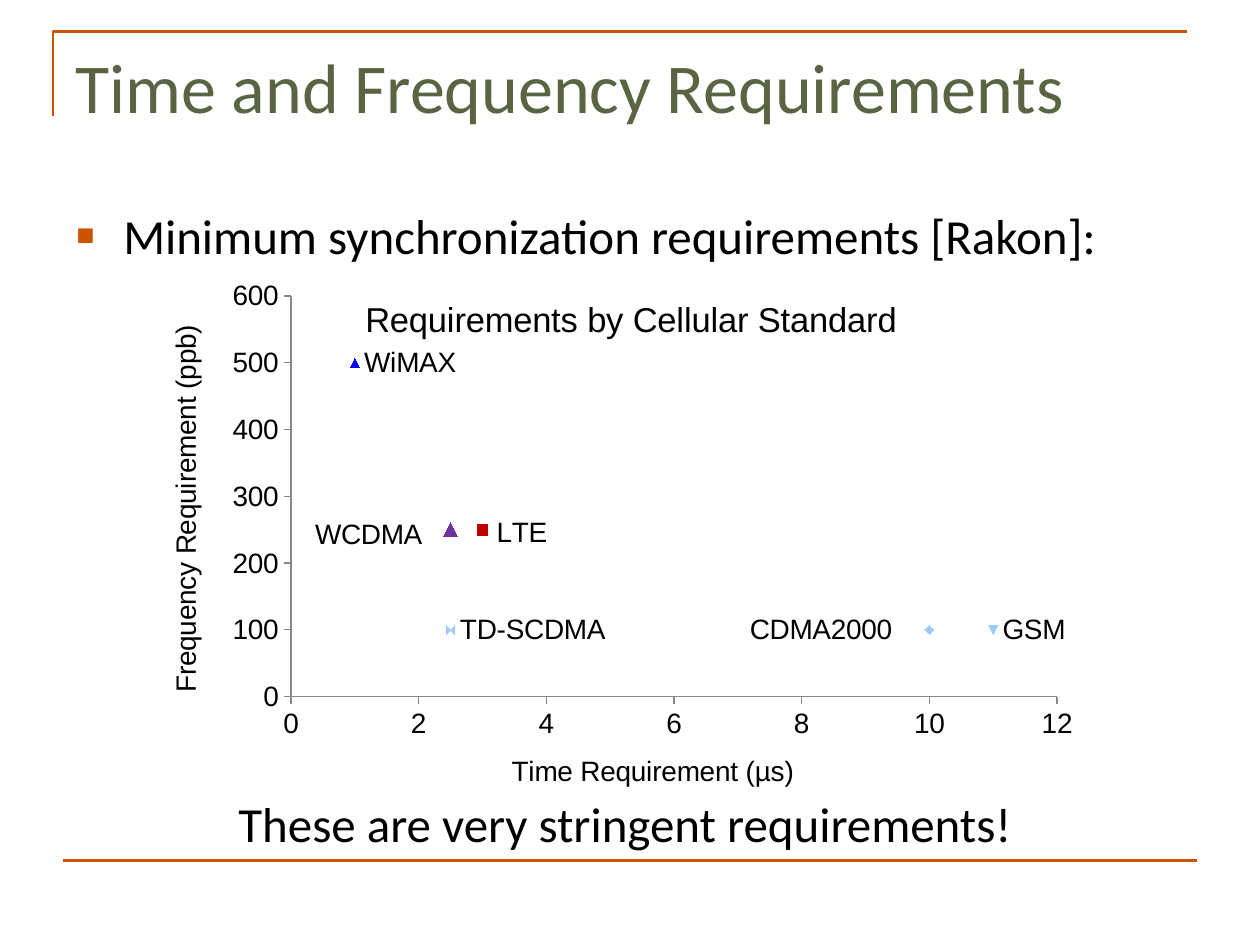
import pptx
import pptx.chart.data
import pptx.dml.color
import pptx.enum.chart
import pptx.enum.shapes
import pptx.enum.text
import pptx.oxml
import pptx.oxml.ns
import pptx.util
from pptx.util import Inches

RGBColor = pptx.dml.color.RGBColor
Marker = pptx.enum.chart.XL_MARKER_STYLE
Side = pptx.enum.chart.XL_LABEL_POSITION
qn = pptx.oxml.ns.qn

ORANGE = RGBColor(0xCC, 0x53, 0x00)
OLIVE = RGBColor(0x59, 0x64, 0x42)
BLACK = RGBColor(0, 0, 0)
GREY = RGBColor(0x87, 0x87, 0x87)
BLUE = RGBColor(0, 0, 0xFF)
RED = RGBColor(0xC0, 0, 0)
PURPLE = RGBColor(0x70, 0x30, 0xA0)
SKY = RGBColor(0x99, 0xCC, 0xFF)

CHART_AREA = (1.25, 2.17, 7.5, 4.33)

# name, time (µs), frequency (ppb), marker, size, colour, label side, label offset (inches)
STANDARDS = [
    ("CDMA2000", 10, 100, Marker.AUTOMATIC, 5, SKY, Side.LEFT, (-0.22, 0)),
    ("GSM", 11, 100, Marker.AUTOMATIC, 5, SKY, Side.RIGHT, None),
    ("WiMAX", 1, 500, Marker.AUTOMATIC, 5, BLUE, Side.RIGHT, None),
    ("LTE", 3, 250, Marker.SQUARE, 6, RED, Side.RIGHT, (0.03, 0.02)),
    ("WCDMA", 2.5, 250, Marker.TRIANGLE, 8, PURPLE, Side.LEFT, (-0.13, 0.04)),
    ("TD-SCDMA", 2.5, 100, Marker.AUTOMATIC, 5, SKY, Side.RIGHT, None),
]


def place(element, index, modes, **lengths):
    """Lay out a chart element by hand; lengths are inches within the chart area."""
    layout = element.find(qn("c:layout"))
    if layout is None:
        layout = element.makeelement(qn("c:layout"))
        element.insert(index, layout)
    manual = layout.makeelement(qn("c:manualLayout"))
    layout.append(manual)
    width, height = CHART_AREA[2:]
    whole = {"x": width, "w": width, "y": height, "h": height}
    shares = {name: length / whole[name] for name, length in lengths.items()}
    for name, value in {**modes, **shares}.items():
        manual.append(manual.makeelement(qn(f"c:{name}"), {"val": str(value)}))


class SlideBuilder:
    body_font = "Calibri"
    chart_font = "Arial"
    chart_size = 16
    rule_width = pptx.util.Pt(1.5)
    edge_modes = {"xMode": "edge", "yMode": "edge"}

    def __init__(self, deck):
        self.slide = deck.slides.add_slide(deck.slide_layouts[6])
        self.shapes = self.slide.shapes

    def style_rule(self, shape):
        shape.line.color.rgb = ORANGE
        shape.line.width = self.rule_width

    def corner(self, left, top, right, bottom):
        builder = self.shapes.build_freeform(Inches(left), Inches(bottom))
        builder.add_line_segments(
            [(Inches(left), Inches(top)), (Inches(right), Inches(top))], close=False)
        shape = builder.convert_to_shape()
        shape.fill.background()
        shape.shadow.inherit = False
        self.style_rule(shape)

    def rule(self, left, right, y):
        line = self.shapes.add_connector(
            pptx.enum.shapes.MSO_CONNECTOR.STRAIGHT,
            Inches(left), Inches(y), Inches(right), Inches(y))
        self.style_rule(line)
        properties = line._element.spPr
        properties.append(properties.makeelement(qn("a:effectLst")))

    def text(self, words, area, size, color, align=None, bullet=False):
        box = self.shapes.add_textbox(*map(Inches, area))
        box.text_frame.word_wrap = True
        para = box.text_frame.paragraphs[0]
        para.alignment = align
        if bullet:
            self.bullet(para)
        span = para.add_run()
        span.text = words
        span.font.name = self.body_font
        span.font.size = pptx.util.Pt(size)
        span.font.color.rgb = color

    def bullet(self, para):
        properties = para._p.get_or_add_pPr()
        properties.set("marL", str(Inches(0.38)))
        properties.set("indent", str(-Inches(0.38)))
        namespace = pptx.oxml.ns.nsdecls("a")
        for xml in (f'<a:buClr {namespace}><a:srgbClr val="{ORANGE}"/></a:buClr>',
                    f'<a:buSzPct {namespace} val="120000"/>',
                    f'<a:buFont {namespace} typeface="Arial"/>',
                    f'<a:buChar {namespace} char="▪"/>'):
            properties.append(pptx.oxml.parse_xml(xml))

    def scatter(self, title, standards):
        data = pptx.chart.data.XyChartData()
        for name, time, frequency, *_ in standards:
            data.add_series(name).add_data_point(time, frequency)
        chart = self.shapes.add_chart(
            pptx.enum.chart.XL_CHART_TYPE.XY_SCATTER, *map(Inches, CHART_AREA), data).chart
        chart.font.name = self.chart_font
        chart.font.size = pptx.util.Pt(self.chart_size)
        chart.font.color.rgb = BLACK
        chart.has_legend = False
        chart.has_title = True
        chart.chart_title.include_in_layout = True
        self.chart_title(chart.chart_title, title, 19.7, 1.6, 0.14)
        chart.plots[0].vary_by_categories = False
        place(chart._chartSpace.chart.plotArea, 0,
              {"layoutTarget": "inner", **self.edge_modes}, x=1.06, y=0.18, w=6.08, h=3.18)
        for series, standard in zip(chart.plots[0].series, standards):
            self.series(series, *standard[3:])
        self.axis(chart.category_axis, "Time Requirement (µs)", 12, 2, 2.77, 3.77)
        self.axis(chart.value_axis, "Frequency Requirement (ppb)", 600, 100, 0.04, 0.37)

    def chart_title(self, title, words, size, x, y):
        span = title.text_frame.paragraphs[0].add_run()
        span.text = words
        span.font.name = self.chart_font
        span.font.size = pptx.util.Pt(size)
        span.font.bold = False
        span.font.color.rgb = BLACK
        place(title._element, 1, self.edge_modes, x=x, y=y)

    def axis(self, axis, words, maximum, step, x, y):
        axis.minimum_scale = 0
        axis.maximum_scale = maximum
        axis.major_unit = step
        axis.has_major_gridlines = False
        axis.major_tick_mark = pptx.enum.chart.XL_TICK_MARK.OUTSIDE
        axis.minor_tick_mark = pptx.enum.chart.XL_TICK_MARK.NONE
        axis.format.line.color.rgb = GREY
        self.chart_title(axis.axis_title, words, self.chart_size, x, y)

    def series(self, series, marker, size, color, side, offset):
        series.smooth = False
        series.format.line.fill.background()
        series.marker.style = marker
        series.marker.size = size
        series.marker.format.fill.solid()
        series.marker.format.fill.fore_color.rgb = color
        series.marker.format.line.fill.background()
        series.points[0].data_label.position = side
        label = series._element.find(".//" + qn("c:dLbl"))
        label.find(qn("c:showVal")).set("val", "0")
        label.find(qn("c:showSerName")).set("val", "1")
        if offset:
            place(label, 1, {}, x=offset[0], y=offset[1])
        self.hide_leader_lines(label.getparent())

    def hide_leader_lines(self, labels):
        leader = labels.find(qn("c:showLeaderLines"))
        if leader is None:
            leader = labels.makeelement(qn("c:showLeaderLines"))
            labels.append(leader)
        leader.set("val", "0")


def main():
    deck = pptx.Presentation()
    deck.slide_width, deck.slide_height = Inches(10), Inches(7.5)
    page = SlideBuilder(deck)
    page.corner(0.42, 0.25, 9.42, 0.92)
    page.rule(0.5, 9.5, 6.83)
    page.text("Time and Frequency Requirements", (0.5, 0.3, 9, 1.25), 40, OLIVE)
    page.text("Minimum synchronization requirements [Rakon]:",
              (0.5, 1.58, 8.92, 0.83), 28, BLACK, bullet=True)
    page.scatter("Requirements by Cellular Standard", STANDARDS)
    page.text("These are very stringent requirements!", (0.5, 6.25, 8.92, 0.83),
              28, BLACK, align=pptx.enum.text.PP_ALIGN.CENTER)
    deck.save("out.pptx")


if __name__ == "__main__":
    main()
